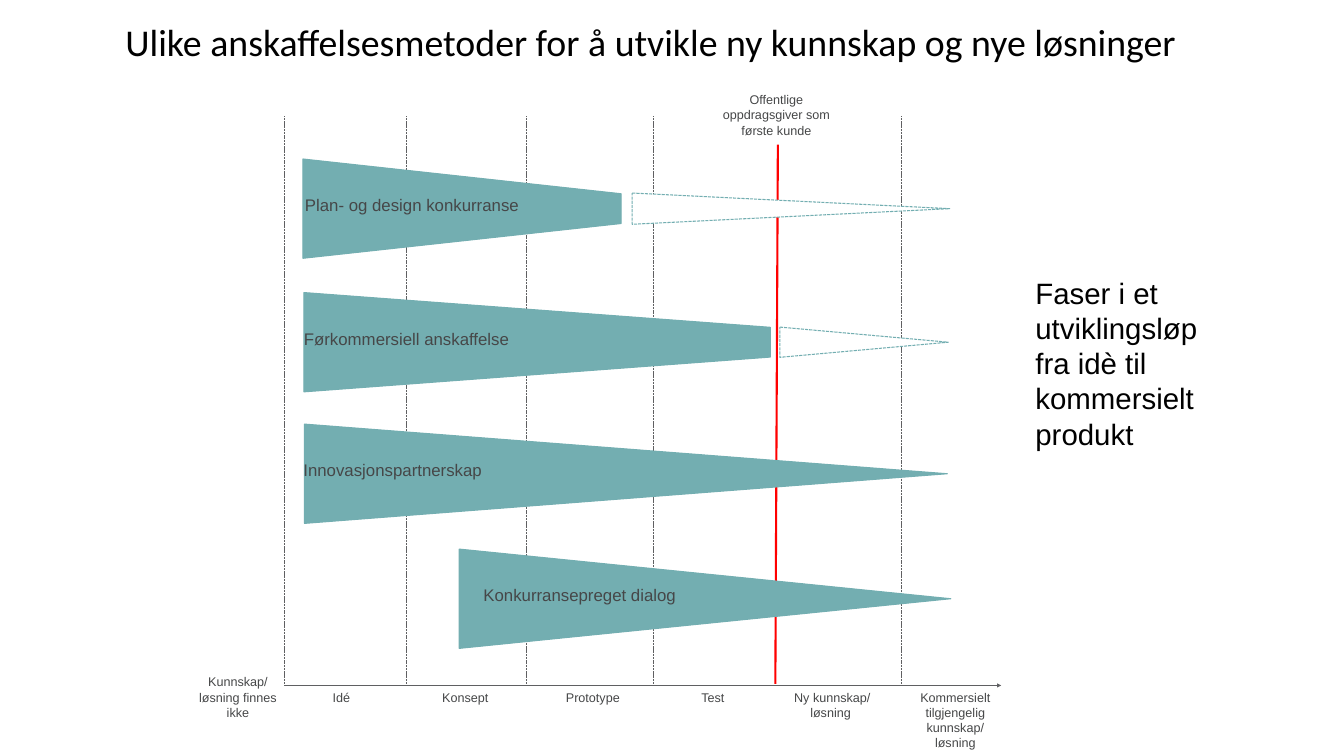
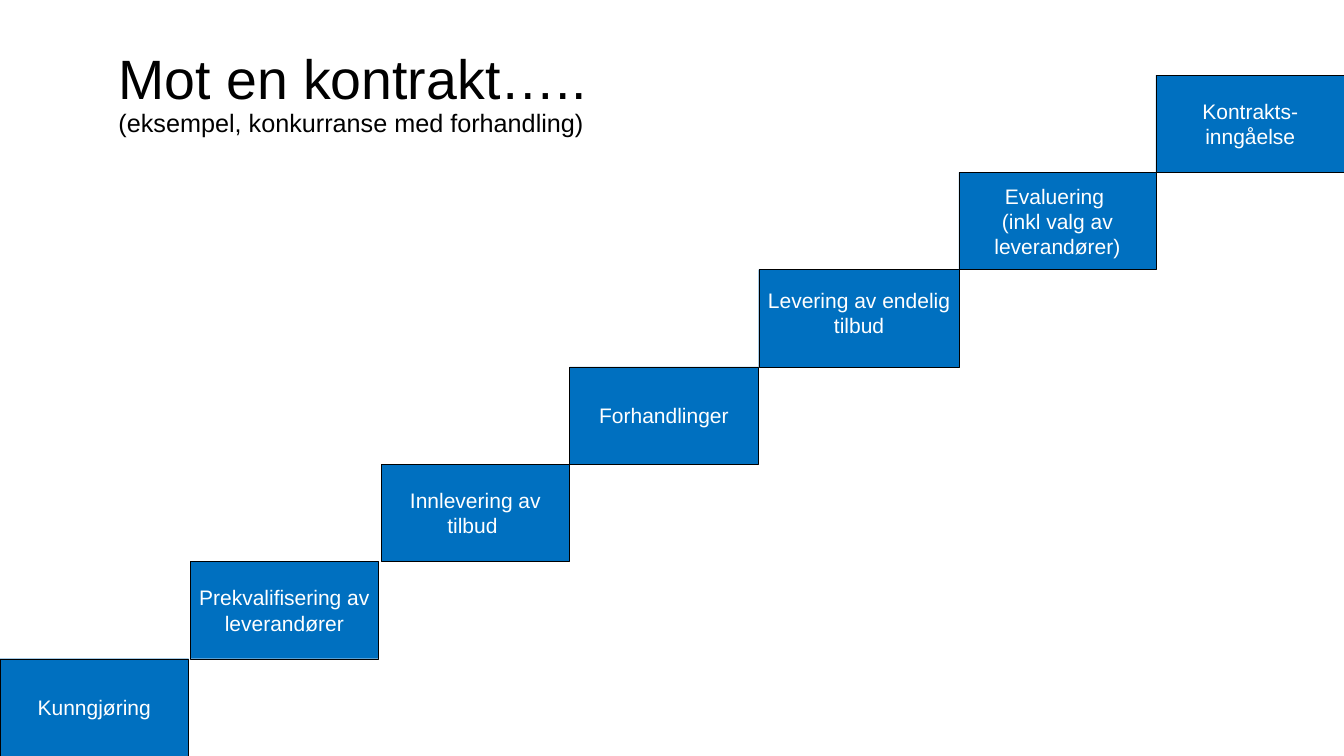
from lxml.etree import SubElement
from pptx import Presentation
from pptx.dml.color import RGBColor
from pptx.enum.dml import MSO_LINE
from pptx.enum.shapes import MSO_CONNECTOR, MSO_SHAPE
from pptx.enum.text import MSO_ANCHOR, MSO_AUTO_SIZE, PP_ALIGN
from pptx.oxml.ns import qn
from pptx.util import Inches, Pt

BLACK = RGBColor(0x00, 0x00, 0x00)
WHITE = RGBColor(0xFF, 0xFF, 0xFF)
GREY = RGBColor(0x46, 0x47, 0x48)
LINE_GREY = RGBColor(0x5F, 0x60, 0x62)
TEAL = RGBColor(0x73, 0xAE, 0xB1)
RED = RGBColor(0xFF, 0x00, 0x00)
BLUE = RGBColor(0x00, 0x70, 0xC0)

SLIDE_W, SLIDE_H = 26.66, 15
BODY_FONT, HEADING_FONT = "Arial", "Calibri"

# Slide 1
METHODS_TITLE = "Ulike anskaffelsesmetoder for å utvikle ny kunnskap og nye løsninger"
SIDE_NOTE = "Faser i et utviklingsløp fra idè til kommersielt produkt"
FIRST_CUSTOMER = "Offentlige oppdragsgiver som første kunde"
PHASE_BORDERS = [5.65, 8.06, 10.45, 12.97, 17.88]
AXIS_TOP, AXIS_Y = 2.31, 13.6
# text, centre, top, lines
PHASES = [
    ("Kunnskap/ løsning finnes ikke", 4.72, 13.3, 3),
    ("Idé", 6.77, AXIS_Y, 1),
    ("Konsept", 9.23, AXIS_Y, 1),
    ("Prototype", 11.76, AXIS_Y, 1),
    ("Test", 14.14, AXIS_Y, 1),
    ("Ny kunnskap/ løsning ", 16.51, AXIS_Y, 2),
    ("Kommersielt tilgjengelig kunnskap/ løsning", 18.95, AXIS_Y, 4),
]
PHASE_W = 2.15
WEDGE_H = 1.97
BLUNT, POINTED = 0.35, 0.5
# text, text left, text width, centre y, wedge (left, length, taper),
# dashed continuation (left, length, height)
METHODS = [
    ("Plan- og design konkurranse", 5.95, 4.74, 4.14,
     (6.01, 6.31, BLUNT), (12.54, 6.3, 0.62)),
    ("Førkommersiell anskaffelse", 5.93, 4.74, 6.79,
     (6.03, 9.25, BLUNT), (15.47, 3.34, 0.6)),
    ("Innovasjonspartnerskap", 5.92, 4, 9.4, (6.04, 12.75, POINTED), None),
    ("Konkurransepreget dialog", 9.49, 9.24, 11.88, (9.11, 9.75, POINTED), None),
]

# Slide 2
CONTRACT_TITLE = "Mot en kontrakt….."
CONTRACT_SUBTITLE = "(eksempel, konkurranse med forhandling)"
STEP_W, STEP_H = 3.74, 1.93
# paragraphs, left, width, bottom inset
STEPS = [
    (["Kunngjøring"], 0, STEP_W, 0.05),
    (["Prekvalifisering av leverandører"], 3.77, STEP_W, 0.05),
    (["Innlevering av tilbud "], 7.56, STEP_W, 0.05),
    (["Forhandlinger"], 11.3, STEP_W, 0.05),
    (["Levering av endelig tilbud"], 15.05, 3.98, 0.26),
    (["Evaluering ", "(inkl valg av leverandører)"], 19.02, 3.91, 0.05),
    (["Kontrakts-inngåelse"], 22.93, STEP_W, 0.05),
]


def style_font(font, size, color, name=BODY_FONT):
    font.size, font.name = Pt(size), name
    font.color.rgb = color


def set_insets(frame, left, top, right, bottom):
    frame.margin_left, frame.margin_top = Inches(left), Inches(top)
    frame.margin_right, frame.margin_bottom = Inches(right), Inches(bottom)


def add_text(slide, text, left, top, width, height, size, color=BLACK,
             font=BODY_FONT, wrap=True):
    """Add a one-paragraph text box and return its text frame."""
    frame = slide.shapes.add_textbox(
        Inches(left), Inches(top), Inches(width), Inches(height)).text_frame
    frame.word_wrap = wrap
    frame.auto_size = MSO_AUTO_SIZE.SHAPE_TO_FIT_TEXT
    frame.text = text
    style_font(frame.paragraphs[0].font, size, color, font)
    return frame


def add_caption(slide, text, centre, top, width, lines):
    height = 0.16 + 0.3 * lines
    frame = add_text(slide, text, centre - width / 2, top, width, height, 18, GREY)
    set_insets(frame, 0.08, 0.08, 0.08, 0.08)
    frame.paragraphs[0].alignment = PP_ALIGN.CENTER


def add_line(slide, x1, y1, x2, y2, color, weight, dash=None, arrow=False):
    connector = slide.shapes.add_connector(
        MSO_CONNECTOR.STRAIGHT, Inches(x1), Inches(y1), Inches(x2), Inches(y2))
    connector.line.color.rgb = color
    connector.line.width = Pt(weight)
    if dash:
        connector.line.dash_style = dash
    properties = connector._element.spPr
    if arrow:
        SubElement(properties.find(qn("a:ln")), qn("a:tailEnd"), type="triangle")
    SubElement(properties, qn("a:effectLst"))


def add_filled(slide, kind, left, top, width, height, fill, line, weight):
    shape = slide.shapes.add_shape(
        kind, Inches(left), Inches(top), Inches(width), Inches(height))
    shape.shadow.inherit = False
    shape.fill.solid()
    shape.fill.fore_color.rgb = fill
    shape.line.color.rgb = line
    shape.line.width = Pt(weight)
    return shape


def add_wedge(slide, left, length, centre_y, height, taper, fill=TEAL):
    """Add a trapezoid turned so that it narrows to the right."""
    wedge = add_filled(slide, MSO_SHAPE.TRAPEZOID,
                       left + (length - height) / 2, centre_y - length / 2,
                       height, length, fill, TEAL, 1.5)
    wedge.rotation = 90
    wedge.adjustments[0] = taper
    return wedge


def build_methods(slide):
    for x in PHASE_BORDERS:
        add_line(slide, x, AXIS_Y - 0.03, x, AXIS_TOP, LINE_GREY, 1, MSO_LINE.SQUARE_DOT)
    add_line(slide, 15.38, AXIS_Y - 0.03, 15.43, 2.87, RED, 3)
    add_line(slide, 5.64, AXIS_Y, 19.86, AXIS_Y, LINE_GREY, 1.5, arrow=True)

    for method, text_left, text_w, centre_y, wedge, continuation in METHODS:
        left, length, taper = wedge
        add_wedge(slide, left, length, centre_y, WEDGE_H, taper)
        if continuation:
            left, length, height = continuation
            dashed = add_wedge(slide, left, length, centre_y, height, POINTED, WHITE)
            dashed.line.dash_style = MSO_LINE.SQUARE_DOT
        label = add_text(slide, method, text_left, centre_y - 0.28, text_w, 0.46, 24, GREY)
        label.paragraphs[0].line_spacing = 0.9

    for phase, centre, top, lines in PHASES:
        add_caption(slide, phase, centre, top, PHASE_W, lines)
    add_caption(slide, FIRST_CUSTOMER, 15.4, 1.75, 2.78, 3)
    add_text(slide, METHODS_TITLE, 2.39, 0.33, 21.27, 1.01, 54,
             font=HEADING_FONT, wrap=False)
    add_text(slide, SIDE_NOTE, 20.44, 5.4, 4.06, 3.64, 42)


def build_contract_steps(slide):
    title = add_text(slide, CONTRACT_TITLE, 2.35, 1.31, 21.01, 1.14, 79.2)
    title.auto_size = MSO_AUTO_SIZE.NONE
    title.vertical_anchor = MSO_ANCHOR.MIDDLE
    set_insets(title, 0, 0, 0, 0)
    heading = title.paragraphs[0]
    heading.line_spacing = 0.9
    heading.add_line_break()
    subtitle = heading.add_run()
    subtitle.text = CONTRACT_SUBTITLE
    subtitle.font.size = Pt(36)

    for number, (paragraphs, left, width, bottom) in enumerate(STEPS, start=1):
        step = add_filled(slide, MSO_SHAPE.RECTANGLE, left, SLIDE_H - number * STEP_H,
                          width, STEP_H, BLUE, BLACK, 0.5)
        frame = step.text_frame
        frame.word_wrap = True
        frame.vertical_anchor = MSO_ANCHOR.MIDDLE
        set_insets(frame, 0.1, 0.05, 0.1, bottom)
        frame.text = "\n".join(paragraphs)
        for paragraph in frame.paragraphs:
            paragraph.alignment = PP_ALIGN.CENTER
            style_font(paragraph.font, 30, WHITE)


def main():
    deck = Presentation()
    deck.slide_width, deck.slide_height = Inches(SLIDE_W), Inches(SLIDE_H)
    blank = deck.slide_layouts[6]
    for build in (build_methods, build_contract_steps):
        build(deck.slides.add_slide(blank))
    deck.save("out.pptx")


if __name__ == "__main__":
    main()
